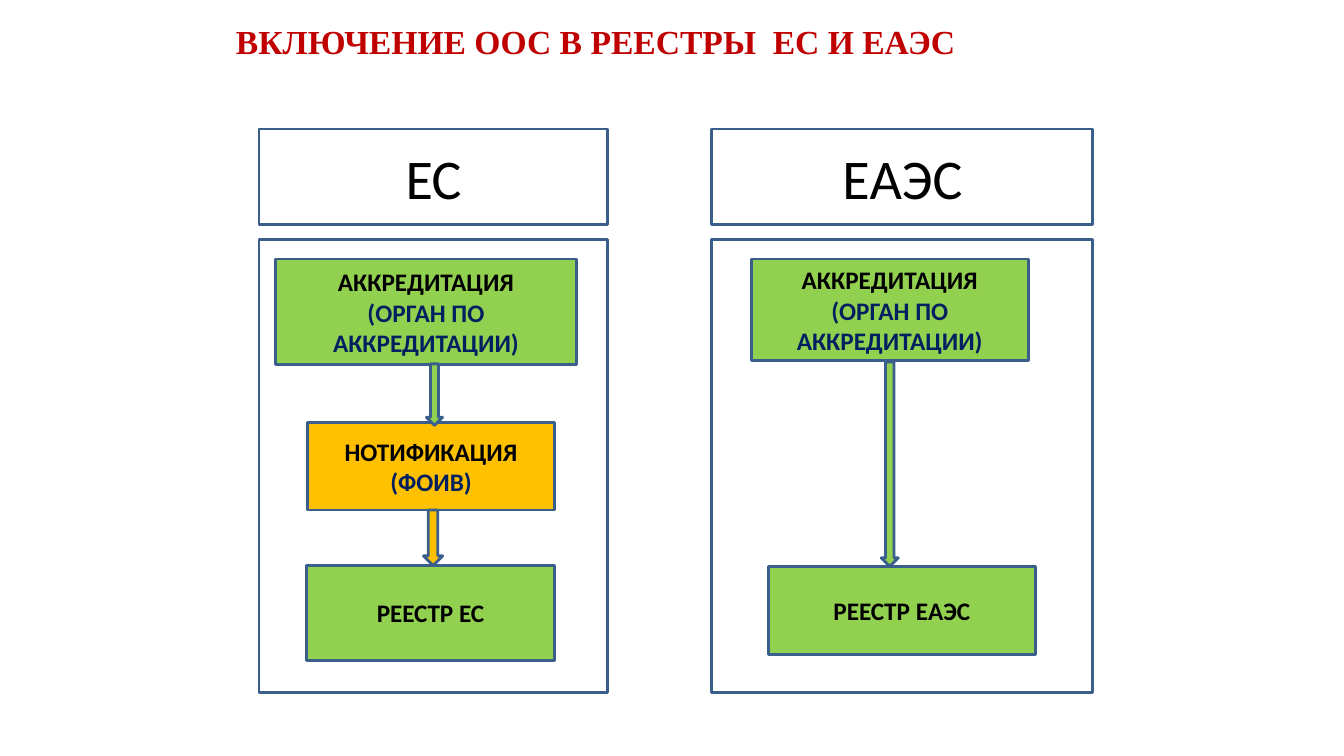
from pptx import Presentation
from pptx.dml.color import RGBColor
from pptx.enum.shapes import MSO_SHAPE as Shape
from pptx.enum.text import MSO_ANCHOR as Anchor, MSO_AUTO_SIZE as AutoSize, PP_ALIGN as Align
from pptx.util import Emu, Pt

PX = 9144  # EMU per px, 100 px to the inch
COLORS = {
    "title": "C00000", "line": "3A5F8C", "text": "000000", "note": "002060",
    "green": "92D050", "amber": "FFC000",
}
TITLE_LAYOUT = 5
HEAD_TOP, HEAD_HEIGHT = 128, 95
FRAME_TOP, FRAME_HEIGHT = 238, 449

ACCREDITATION = ("АККРЕДИТАЦИЯ", "(ОРГАН ПО АККРЕДИТАЦИИ)")
COLUMNS = [
    {
        "head": "ЕС", "left": 257, "width": 346,
        "steps": [
            (ACCREDITATION, (273, 257, 299, 105), "green"),
            (("НОТИФИКАЦИЯ", "(ФОИВ)"), (305, 419, 245, 87), "amber"),
            (("РЕЕСТР ЕС",), (304, 561, 246, 94), "green"),
        ],
        "arrows": [((423, 361, 16, 61), "green"), ((420, 506, 19, 55), "amber")],
    },
    {
        "head": "ЕАЭС", "left": 706, "width": 378,
        "steps": [
            (ACCREDITATION, (745, 257, 275, 101), "green"),
            (("РЕЕСТР ЕАЭС",), (762, 562, 265, 87), "green"),
        ],
        "arrows": [((874, 359, 17, 203), "green")],
    },
]


def color(name):
    return RGBColor.from_string(COLORS[name])


def write(para, text, size=18, font="Calibri", ink="text", bold=False, align=Align.CENTER):
    para.alignment = align
    span = para.add_run()
    span.text = text
    span.font.size = Pt(size)
    span.font.name = font
    span.font.bold = bold
    span.font.color.rgb = color(ink)


class SlideBuilder:
    def __init__(self, deck):
        self.page = deck.slides.add_slide(deck.slide_layouts[TITLE_LAYOUT])

    def title(self, text, left, top, width, height):
        box = self.page.shapes.title
        box.left, box.top, box.width, box.height = (
            Emu(n * PX) for n in (left, top, width, height))
        frame = box.text_frame
        frame.margin_left = frame.margin_right = frame.margin_top = frame.margin_bottom = 0
        frame.vertical_anchor = Anchor.TOP
        frame.word_wrap = True
        frame.auto_size = AutoSize.NONE
        write(frame.paragraphs[0], text, size=24, font="Times New Roman",
              ink="title", bold=True, align=Align.LEFT)

    def shape(self, kind, place, fill=None):
        box = self.page.shapes.add_shape(kind, *(Emu(n * PX) for n in place))
        box.shadow.inherit = False
        box.line.color.rgb = color("line")
        box.line.width = Pt(2)
        if fill:
            box.fill.solid()
            box.fill.fore_color.rgb = color(fill)
        else:
            box.fill.background()
        return box

    def box(self, lines, place, fill=None, size=18, bold=True):
        """Draw a rectangle whose first line is black and later lines navy."""
        frame = self.shape(Shape.RECTANGLE, place, fill).text_frame
        frame.word_wrap = True
        frame.vertical_anchor = Anchor.MIDDLE
        for index, line in enumerate(lines):
            para = frame.add_paragraph() if index else frame.paragraphs[0]
            write(para, line, size=size, bold=bold, ink="note" if index else "text")

    def arrow(self, place, fill):
        self.shape(Shape.DOWN_ARROW, place, fill)

    def column(self, head, left, width, steps, arrows):
        self.shape(Shape.RECTANGLE, (left, FRAME_TOP, width, FRAME_HEIGHT))
        self.box([head], (left, HEAD_TOP, width, HEAD_HEIGHT), size=40, bold=False)
        for lines, place, fill in steps:
            self.box(lines, place, fill)
        for place, fill in arrows:
            self.arrow(place, fill)


def main():
    deck = Presentation()
    deck.slide_width, deck.slide_height = Emu(1333 * PX), Emu(750 * PX)
    builder = SlideBuilder(deck)
    builder.title("ВКЛЮЧЕНИЕ ООС В РЕЕСТРЫ  ЕС И ЕАЭС", 234, 21, 874, 39)
    for column in COLUMNS:
        builder.column(**column)
    deck.save("out.pptx")


if __name__ == "__main__":
    main()
